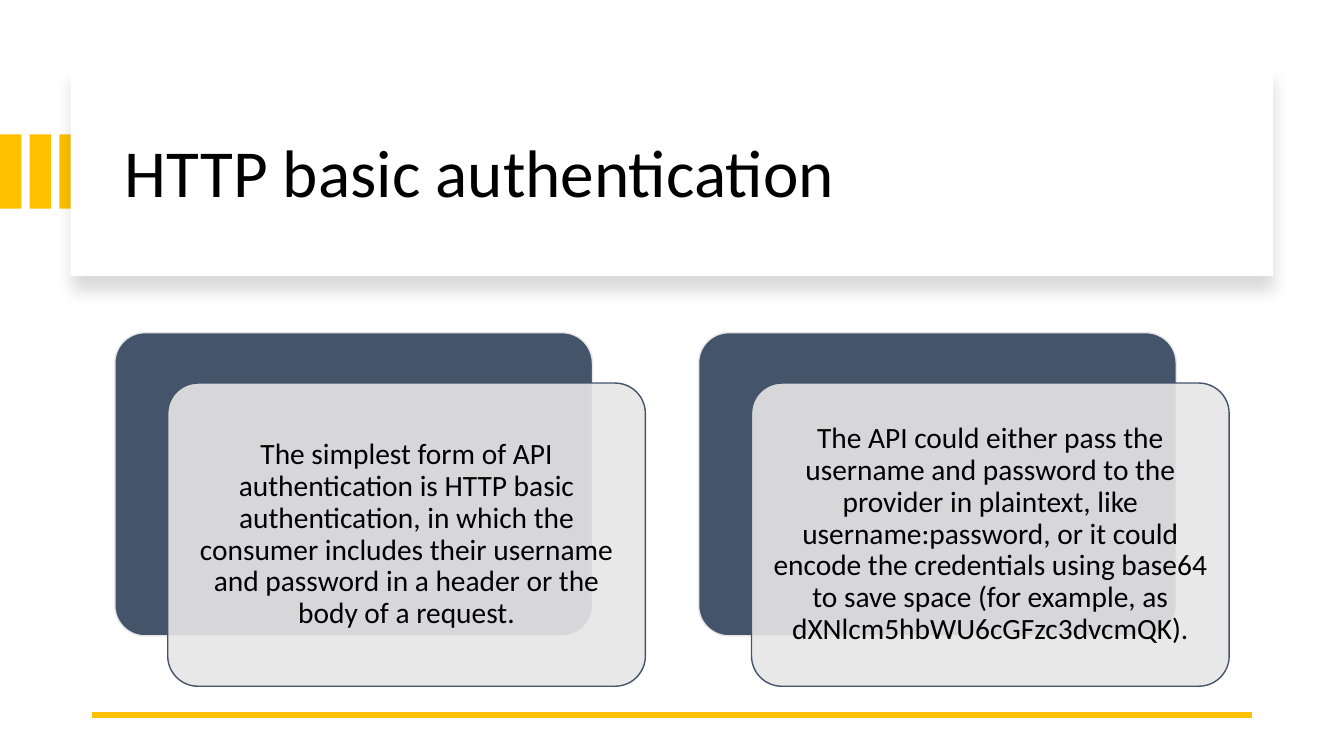
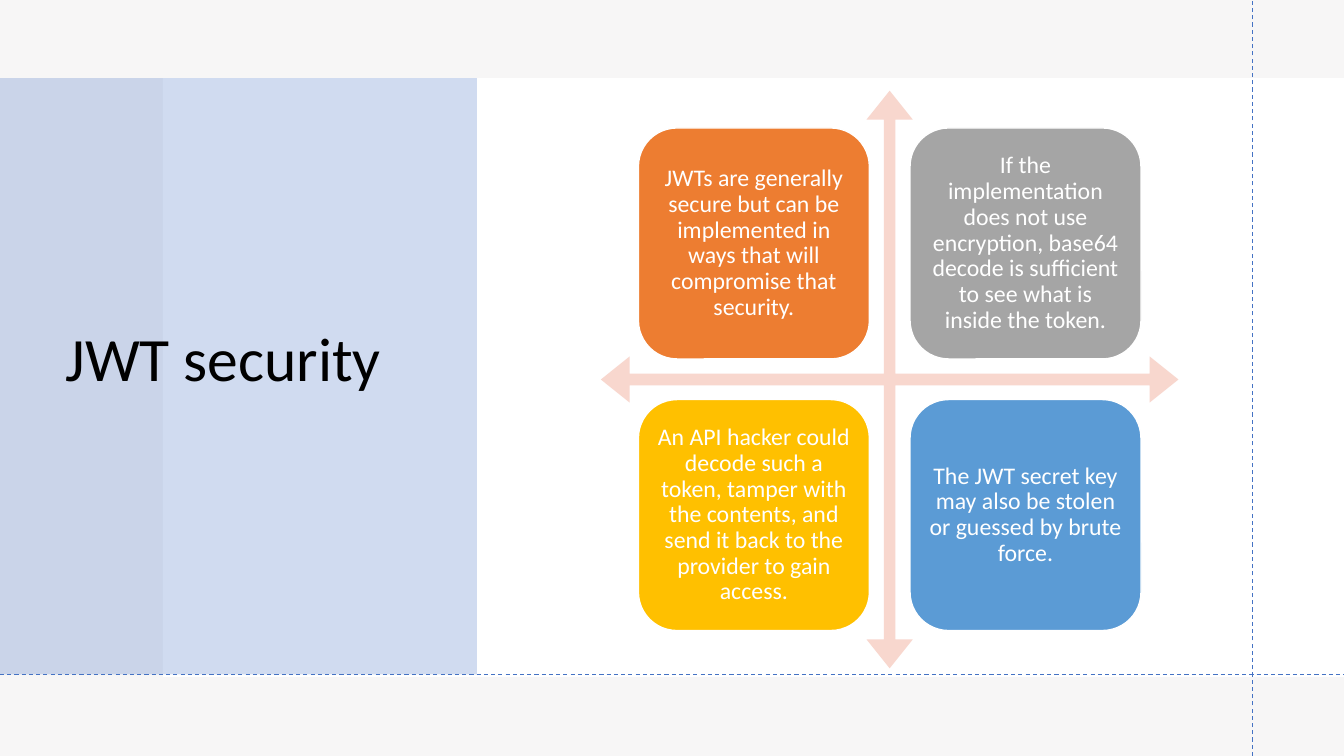
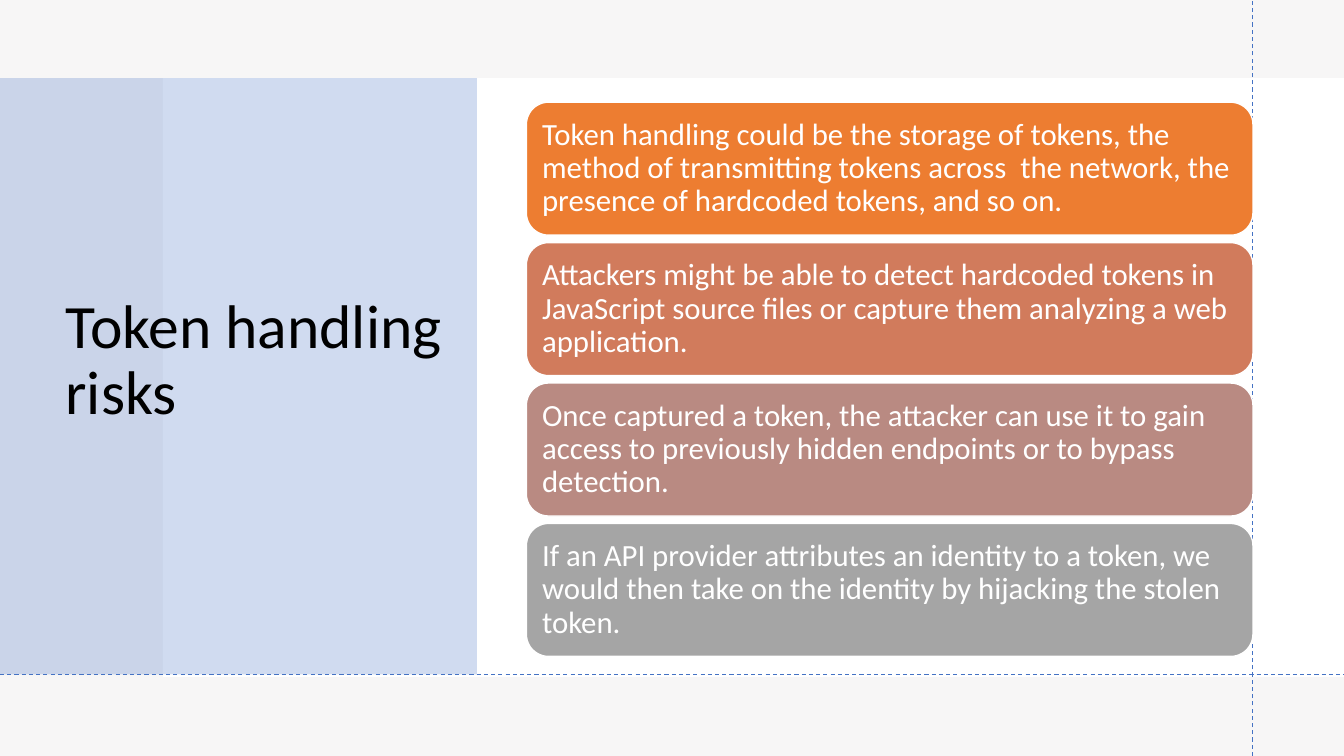
"""Build three slides on API authentication and token security."""
import pptx
import pptx.util
import pptx.dml.color
import pptx.enum.dml
import pptx.enum.shapes
import pptx.enum.text
import pptx.oxml
import pptx.oxml.ns

Pt = pptx.util.Pt
SHAPE = pptx.enum.shapes.MSO_SHAPE
ALIGN = pptx.enum.text.PP_ALIGN
FONT = "Calibri"
COLORS = {
    "black": "000000", "white": "FFFFFF", "backdrop": "F7F6F6",
    "gold": "FFC000", "slate": "44546A", "light": "E7E6E6",
    "blue": "4472C4", "sky": "5B9BD5", "orange": "ED7D31",
    "clay": "D17B5C", "rose": "B98A82", "gray": "A5A5A5", "blush": "F8D7CE",
}
RGB = {k: pptx.dml.color.RGBColor.from_string(v) for k, v in COLORS.items()}
FRAME_FORMAT = {
    "word_wrap": True,
    "auto_size": pptx.enum.text.MSO_AUTO_SIZE.NONE,
    "vertical_anchor": pptx.enum.text.MSO_ANCHOR.MIDDLE,
}
MARGINS = ("margin_left", "margin_top", "margin_right", "margin_bottom")


def add_box(slide, kind, at, fill, line=None, alpha=None):
    sp = slide.shapes.add_shape(kind, *[Pt(v) for v in at])
    sp.shadow.inherit = False
    sp.fill.solid()
    sp.fill.fore_color.rgb = RGB[fill]
    if alpha:
        color = sp.element.spPr.find(".//" + pptx.oxml.ns.qn("a:srgbClr"))
        color.append(pptx.oxml.parse_xml(
            f'<a:alpha {pptx.oxml.ns.nsdecls("a")} val="{alpha * 1000}"/>'))
    if line:
        sp.line.color.rgb = RGB[line]
        sp.line.width = Pt(1)
    else:
        sp.line.fill.background()
    return sp


def write(sp, text, size, color, align):
    tf = sp.text_frame
    for name, value in FRAME_FORMAT.items():
        setattr(tf, name, value)
    tf.text = text
    p = tf.paragraphs[0]
    for name, value in {"alignment": align, "line_spacing": 0.9}.items():
        setattr(p, name, value)
    r = p.runs[0]
    for name, value in {"name": FONT, "size": Pt(size)}.items():
        setattr(r.font, name, value)
    r.font.color.rgb = RGB[color]
    return tf


prs = pptx.Presentation()
prs.slide_width, prs.slide_height = Pt(960), Pt(540)
basic, jwt, risks = [prs.slides.add_slide(prs.slide_layouts[5]) for _ in range(3)]
side_title = (39.6, 53.3, 284.4, 409.7)
titles = [
    (basic, "HTTP basic authentication", 48, (82, 64, 801.4, 122.4)),
    (jwt, "JWT security", 44, side_title),
    (risks, "Token handling risks", 44, side_title),
]

for i in range(3):
    add_box(basic, SHAPE.RECTANGLE, (21.2 * i, 96, 15.3, 53), "gold")
banner = add_box(basic, SHAPE.RECTANGLE, (50.4, 48.2, 859, 149), "white")
banner.element.spPr.find(pptx.oxml.ns.qn("a:effectLst")).append(pptx.oxml.parse_xml(
    f'<a:outerShdw {pptx.oxml.ns.nsdecls("a")} blurRad="{Pt(11)}" dist="{Pt(10)}" '
    f'dir="5400000" algn="t" rotWithShape="0"><a:srgbClr val="{COLORS["black"]}">'
    '<a:alpha val="15000"/></a:srgbClr></a:outerShdw>'))

for slide in (jwt, risks):
    slide.background.fill.solid()
    slide.background.fill.fore_color.rgb = RGB["backdrop"]
    add_box(slide, SHAPE.RECTANGLE, (116.4, 55.8, 843.6, 427.7), "white")
    add_box(slide, SHAPE.RECTANGLE, (0, 55.8, 340.6, 426), "blue", alpha=25)

side_rules = [((894.7, 540), (894.7, 0)), ((0, 481.7), (960, 481.7))]
rules = [(basic, (894, 510.5), (66, 510.5), "gold", 4.5, None)]
rules += [(slide, start, end, "blue", 0.75, pptx.enum.dml.MSO_LINE.DASH)
          for slide in (jwt, risks) for start, end in side_rules]
for slide, start, end, color, width, dash in rules:
    line = slide.shapes.add_connector(
        pptx.enum.shapes.MSO_CONNECTOR.STRAIGHT, *[Pt(v) for v in start + end])
    line.line.color.rgb = RGB[color]
    line.line.width = Pt(width)
    line.line.dash_style = dash
    line.element.spPr.append(pptx.oxml.parse_xml(
        f'<a:effectLst {pptx.oxml.ns.nsdecls("a")}/>'))

cards = []
basic_texts = [
    "The simplest form of API authentication is HTTP basic authentication, in which "
    "the consumer includes their username and password in a header or the body of a "
    "request.",
    "The API could either pass the username and password to the provider in plaintext, "
    "like username:password, or it could encode the credentials using base64 to save "
    "space (for example, as dXNlcm5hbWU6cGFzc3dvcmQK).",
]
for i, text in enumerate(basic_texts):
    left, top, width, height = 82 + 417 * i, 237.6, 341.2, 216.6
    back = add_box(basic, SHAPE.ROUNDED_RECTANGLE, (left, top, width, height),
                   "slate", "light")
    front = add_box(basic, SHAPE.ROUNDED_RECTANGLE,
                    (left + 37.8, top + 36, width, height), "light", "slate", 90)
    for sp in (back, front):
        sp.adjustments[0] = 0.1
    cards.append((front, text, 21, "black", ALIGN.CENTER))

arrows = add_box(jwt, SHAPE.QUAD_ARROW, (429.2, 64.8, 412.6, 412.6), "blush")
for i, value in enumerate((0.02, 0.04, 0.05)):
    arrows.adjustments[i] = value
jwt_texts = [
    ("orange", "JWTs are generally secure but can be implemented in ways that will "
     "compromise that security."),
    ("gray", "If the implementation does not use encryption, base64 decode is "
     "sufficient to see what is inside the token."),
    ("gold", "An API hacker could decode such a token, tamper with the contents, and "
     "send it back to the provider to gain access."),
    ("sky", "The JWT secret key may also be stolen or guessed by brute force."),
]
for i, (fill, text) in enumerate(jwt_texts):
    row, col = divmod(i, 2)
    sp = add_box(jwt, SHAPE.ROUNDED_RECTANGLE,
                 (456 + 194 * col, 91.4 + 194 * row, 165, 165), fill, "white")
    cards.append((sp, text, 17, "white", ALIGN.CENTER))

risk_texts = [
    ("orange", "Token handling could be the storage of tokens, the method of "
     "transmitting tokens across  the network, the presence of hardcoded tokens, "
     "and so on."),
    ("clay", "Attackers might be able to detect hardcoded tokens in JavaScript source "
     "files or capture them analyzing a web application."),
    ("rose", "Once captured a token, the attacker can use it to gain access to "
     "previously hidden endpoints or to bypass detection."),
    ("gray", "If an API provider attributes an identity to a token, we would then take "
     "on the identity by hijacking the stolen token."),
]
for i, (fill, text) in enumerate(risk_texts):
    sp = add_box(risks, SHAPE.ROUNDED_RECTANGLE,
                 (376, 73 + 100.3 * i, 519, 95), fill, "white")
    cards.append((sp, text, 22, "white", ALIGN.LEFT))

for sp, text, size, color, align in cards:
    tf = write(sp, text, size, color, align)
    for name in MARGINS:
        setattr(tf, name, Pt(0.3 * size))

for slide, text, size, at in titles:
    title = slide.shapes.title
    for name, value in zip(("left", "top", "width", "height"), at):
        setattr(title, name, Pt(value))
    write(title, text, size, "black", ALIGN.LEFT)
    slide.shapes.element.append(title.element)

prs.save("out.pptx")
